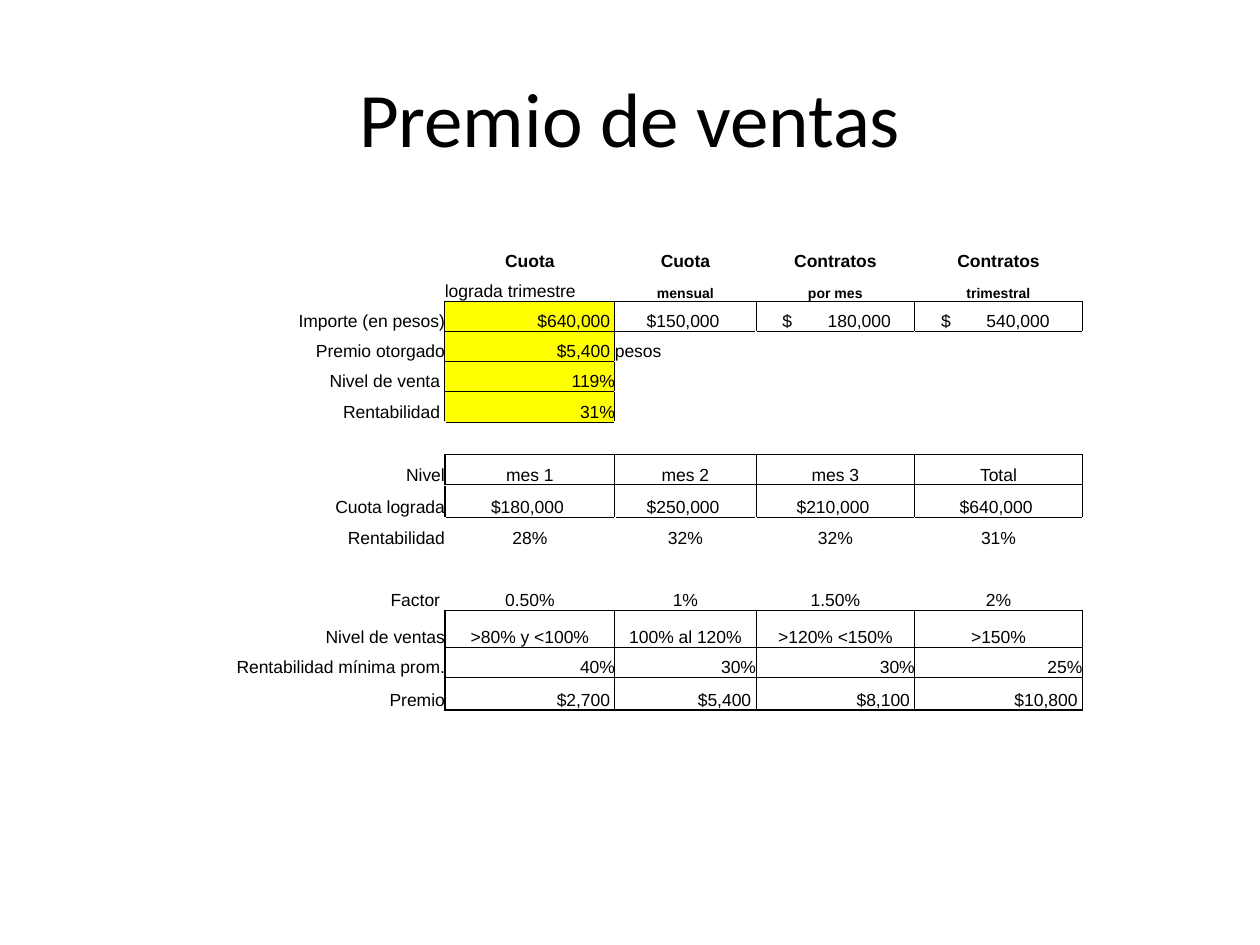
from lxml import etree
from pptx import Presentation
from pptx.dml.color import RGBColor
from pptx.enum.text import MSO_ANCHOR, PP_ALIGN
from pptx.oxml.ns import qn
from pptx.util import Inches, Pt

LEFT, CENTER, RIGHT = PP_ALIGN.LEFT, PP_ALIGN.CENTER, PP_ALIGN.RIGHT
MIDDLE, BOTTOM = MSO_ANCHOR.MIDDLE, MSO_ANCHOR.BOTTOM
BLACK, YELLOW = "000000", "FFFF00"

TITLE = "Premio de ventas"
ROWS = [
    ["", "Cuota", "Cuota", "Contratos", "Contratos"],
    ["", "lograda trimestre", "mensual", "por mes", "trimestral"],
    ["Importe (en pesos)", "$640,000 ", "$150,000 ", "$\t180,000", "$\t540,000"],
    ["Premio otorgado", "$5,400 ", "pesos", "", ""],
    ["Nivel de venta ", "119%", "", "", ""],
    ["Rentabilidad ", "31%", "", "", ""],
    [""] * 5,
    ["Nivel", "mes 1", "mes 2", "mes 3", "Total"],
    ["Cuota lograda", "$180,000 ", "$250,000 ", "$210,000 ", "$640,000 "],
    ["Rentabilidad", "28%", "32%", "32%", "31%"],
    [""] * 5,
    ["Factor ", "0.50%", "1%", "1.50%", "2%"],
    ["Nivel de ventas", ">80% y <100%", "100% al 120%", ">120% <150%", ">150%"],
    ["Rentabilidad mínima prom.", "40%", "30%", "30%", "25%"],
    ["Premio", "$2,700 ", "$5,400 ", "$8,100 ", "$10,800 "],
]
COL_WIDTHS = [2.2, 1.35, 1.12, 1.26, 1.33]
ROW_HEIGHTS = [0.32] + [0.24] * 5 + [0.26, 0.24, 0.26, 0.24, 0.24, 0.26, 0.29, 0.24, 0.26]

# first row, last row, first column, last column, outer line width
BOXES = [(2, 2, 1, 4, 0.5), (2, 5, 1, 1, 0.5), (7, 8, 1, 4, 1), (12, 14, 1, 4, 1)]
INNER_WIDTH = 0.5
RESULT_CELLS = [(r, 1) for r in range(2, 6)]
RIGHT_CELLS = RESULT_CELLS + [(r, c) for r in (13, 14) for c in range(1, 5)]
LEFT_CELLS = [(1, 1), (3, 2)]
SMALL_CELLS = [(1, c) for c in range(2, 5)]
AMOUNT_INSET, AMOUNT_TAB = 0.21, 0.86


def color(hex_string):
    return RGBColor.from_string(hex_string)


def style(p, size, font, align, bold=False):
    p.alignment = align
    p.font.size = Pt(size)
    p.font.name = font
    p.font.bold = bold
    p.font.color.rgb = color(BLACK)


def box_edges():
    """Map each cell to its line widths; both cells beside an edge get it."""
    edges = {}

    def put(r, c, side, width):
        edges.setdefault((r, c), {})[side] = width

    for top, bottom, left, right, outer in BOXES:
        for r in range(top, bottom + 1):
            for c in range(left, right + 2):
                width = outer if c in (left, right + 1) else INNER_WIDTH
                put(r, c, "L", width)
                put(r, c - 1, "R", width)
        for c in range(left, right + 1):
            for r in range(top, bottom + 2):
                width = outer if r in (top, bottom + 1) else INNER_WIDTH
                put(r, c, "T", width)
                put(r - 1, c, "B", width)
    return edges


def draw_borders(cell, widths):
    tcPr = cell._tc.get_or_add_tcPr()
    sides = [side for side in "LRTB" if side in widths]
    for i, side in enumerate(sides):
        ln = etree.Element(qn(f"a:ln{side}"), w=str(Pt(widths[side])))
        fill = etree.SubElement(ln, qn("a:solidFill"))
        etree.SubElement(fill, qn("a:srgbClr"), val=BLACK)
        tcPr.insert(i, ln)


def add_right_tab(p, position):
    tabs = etree.Element(qn("a:tabLst"))
    etree.SubElement(tabs, qn("a:tab"), pos=str(Inches(position)), algn="r")
    p._p.get_or_add_pPr().insert(0, tabs)


def alignment(r, c, text):
    if (r, c) in LEFT_CELLS or "\t" in text:
        return LEFT
    return RIGHT if c == 0 or (r, c) in RIGHT_CELLS else CENTER


prs = Presentation()
prs.slide_width, prs.slide_height = Inches(10), Inches(7.5)
s = prs.slides.add_slide(prs.slide_layouts[6])

tf = s.shapes.add_textbox(Inches(0.5), Inches(0.3), Inches(9), Inches(1.25)).text_frame
tf.word_wrap = True
tf.vertical_anchor = MIDDLE
tf.text = TITLE
style(tf.paragraphs[0], 44, "Calibri", CENTER)

table = s.shapes.add_table(
    len(ROWS), len(COL_WIDTHS), Inches(1.33), Inches(1.83),
    Inches(sum(COL_WIDTHS)), Inches(sum(ROW_HEIGHTS))).table
table.first_row = table.horz_banding = False
for column, width in zip(table.columns, COL_WIDTHS):
    column.width = Inches(width)
for row, height in zip(table.rows, ROW_HEIGHTS):
    row.height = Inches(height)

edges = box_edges()
for r, row in enumerate(ROWS):
    for c, text in enumerate(row):
        cell = table.cell(r, c)
        cell.margin_left = cell.margin_right = cell.margin_top = cell.margin_bottom = 0
        cell.vertical_anchor = BOTTOM
        if (r, c) in RESULT_CELLS:
            cell.fill.solid()
            cell.fill.fore_color.rgb = color(YELLOW)
        else:
            cell.fill.background()
        p = cell.text_frame.paragraphs[0]
        p.text = text
        small = (r, c) in SMALL_CELLS
        style(p, 8 if small else 10, "Arial", alignment(r, c, text), bold=r == 0 or small)
        if "\t" in text:
            cell.margin_left = Inches(AMOUNT_INSET)
            add_right_tab(p, AMOUNT_TAB)
        draw_borders(cell, edges.get((r, c), {}))

prs.save("out.pptx")
